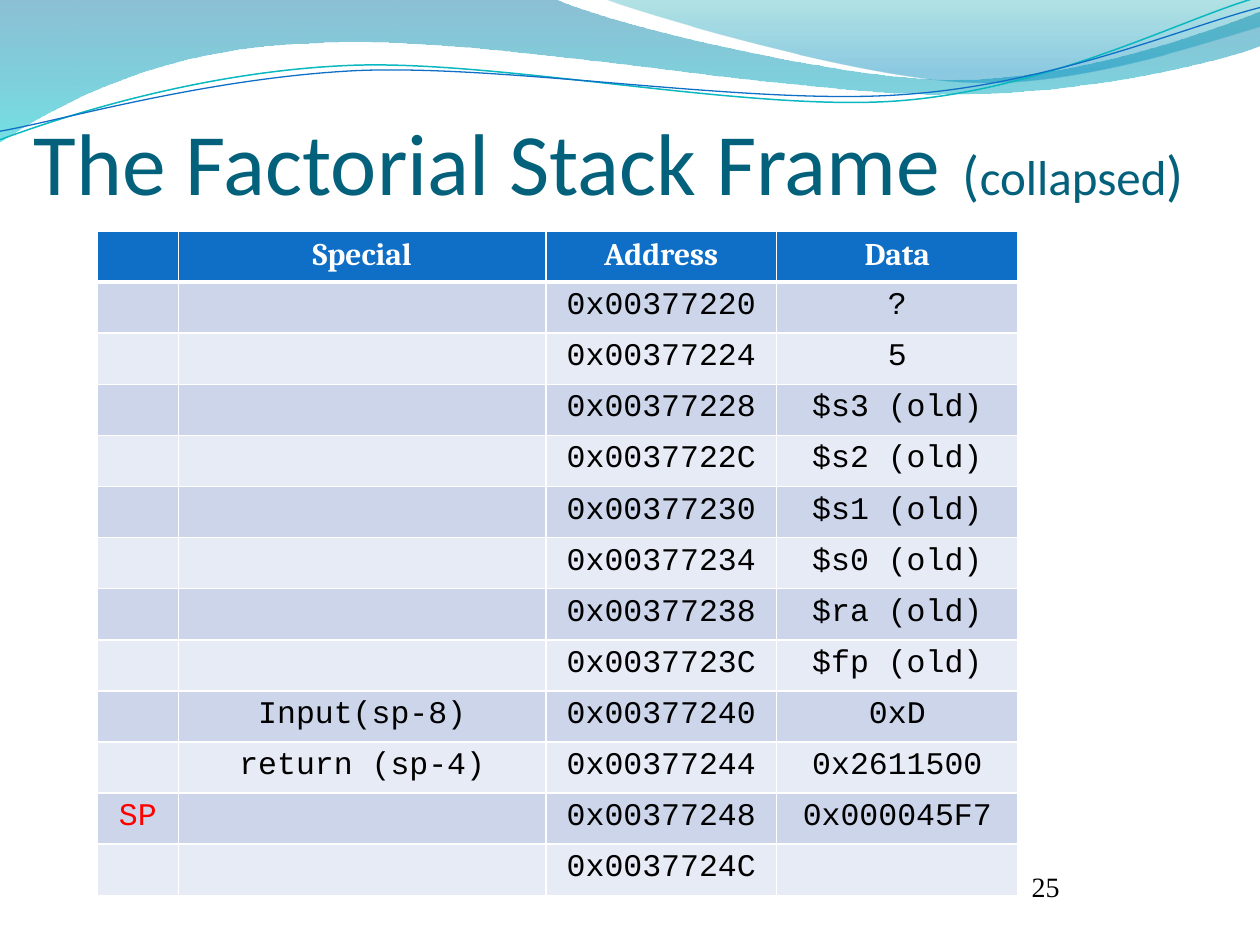
from lxml.etree import SubElement
from pptx import Presentation
from pptx.dml.color import RGBColor
from pptx.enum.text import MSO_ANCHOR as Anchor, MSO_AUTO_SIZE as AutoSize, PP_ALIGN as Align
from pptx.oxml import parse_xml
from pptx.oxml.ns import nsdecls, qn
from pptx.util import Pt


class Theme:
    title, header, code, number = "Calibri", "Cambria", "Courier New", "Times New Roman"
    heading, white, black, red = "04617B", "FFFFFF", "000000", "FF0000"
    header_fill = "0F6FC6"
    bands = ("CCD5EA", "E7EBF5")
    table_size, number_size = 18, 16


TITLE = [("The Factorial Stack Frame", 50), (" ", 54), ("(", 32), ("collapsed", 28), (")", 32)]
PAGE_NUMBER = "25"

HEADER = ("", "Special", "Address", "Data")
STACK = [
    ("", "", "0x00377220", "?"),
    ("", "", "0x00377224", "5"),
    ("", "", "0x00377228", "$s3 (old)"),
    ("", "", "0x0037722C", "$s2 (old)"),
    ("", "", "0x00377230", "$s1 (old)"),
    ("", "", "0x00377234", "$s0 (old)"),
    ("", "", "0x00377238", "$ra (old)"),
    ("", "", "0x0037723C", "$fp (old)"),
    ("", "Input(sp-8)", "0x00377240", "0xD"),
    ("", "return (sp-4)", "0x00377244", "0x2611500"),
    ("SP", "", "0x00377248", "0x000045F7"),
    ("", "", "0x0037724C", ""),
]
COLUMN_WIDTHS = (46.4, 210, 131.8, 138)
ROW_HEIGHT = 29.2

# Each path is a start point, then line ends (x, y) or Bezier curves (three points).
# Gradient stops: position, colour, opacity percent.
BANDS = [
    ([(0, 0), (316.8, -0.7),
      (342.7, 12.2, 478.1, 45.4, 545.8, 45.4), (614.2, 45.4, 689.8, 18.7, 720, 6.5),
      (720.7, 25.9),
      (707.8, 31.7, 626.4, 54.7, 537.1, 54), (447.8, 54, 275, 20.2, 185, 24.5),
      (92.2, 25.9, 33.1, 59.8, -0.7, 81.4), (0, 0)],
     [(0, "0074A1", 45), (1, "00C6CF", 55)]),
    ([(344.9, -0.7),
      (366.5, 7.9, 491, 44.6, 553.7, 46.8), (616.3, 49.7, 691.9, 23, 720, 15.1),
      (720, 0), (344.9, -0.7)],
     [(0, "00A1A9", 30), (0.8, "008BBF", 45)]),
]
STRANDS = [
    ([(-1.4, 62.9), (33.8, 51.7, 114.1, 29.4, 199.8, 29.9),
      (284.8, 30.3, 425.8, 67.3, 512.4, 64.9), (599, 62.4, 676.5, 25.7, 720.2, 15.5)],
     "0AB8BF", 0.85),
    ([(-1.1, 58), (32.9, 53.8, 118.3, 33.2, 204.1, 33),
      (290.6, 33.4, 428.9, 63.8, 515.5, 61.4), (601.4, 59.6, 678.5, 30.1, 721.4, 21.3)],
     "0F6FC6", 0.75),
]
STRAND_ROTATION = 357.3


def rgb(value):
    return RGBColor.from_string(value)


def add_path(page, path, close):
    """Draw every point as a line end, then merge each triple of a curve into one Bezier."""
    points = [(Pt(x), Pt(y)) for part in path for x, y in zip(part[::2], part[1::2])]
    builder = page.shapes.build_freeform(*points[0])
    builder.add_line_segments(points[1:], close=close)
    shape = builder.convert_to_shape()
    shape.shadow.inherit = False
    lines = iter(list(shape.element.iter(qn("a:lnTo"))))
    for part in path[1:]:
        first = next(lines)
        if len(part) == 6:
            curve = parse_xml(f'<a:cubicBezTo {nsdecls("a")}/>')
            first.addprevious(curve)
            for line in (first, next(lines), next(lines)):
                curve.append(line[0])
                line.getparent().remove(line)
    return shape


def add_band(page, path, stops):
    shape = add_path(page, path, True)
    shape.line.fill.background()
    shape.fill.gradient()
    shape.fill.gradient_angle = 270
    for stop, (position, color, _) in zip(shape.fill.gradient_stops, stops):
        stop.position = position
        stop.color.rgb = rgb(color)
    for node, (_, _, opacity) in zip(shape.element.iter(qn("a:srgbClr")), stops):
        SubElement(node, qn("a:alpha"), val=str(opacity * 1000))


def add_strand(page, path, color, width):
    shape = add_path(page, path, False)
    shape.rotation = STRAND_ROTATION
    shape.fill.background()
    shape.line.color.rgb = rgb(color)
    shape.line.width = Pt(width)


def format_span(span, font, size, color, bold=False):
    span.font.name = font
    span.font.size = Pt(size)
    span.font.color.rgb = rgb(color)
    span.font.bold = bold


def add_borders(cell, top, bottom):
    widths = {"lnL": 1, "lnR": 1, "lnT": top, "lnB": bottom}
    properties = cell._tc.get_or_add_tcPr()
    for index, (tag, width) in enumerate(widths.items()):
        properties.insert(index, parse_xml(
            f'<a:{tag} {nsdecls("a")} w="{Pt(width)}"><a:solidFill>'
            f'<a:srgbClr val="{Theme.white}"/></a:solidFill></a:{tag}>'))


def add_stack_table(page):
    rows = [HEADER] + STACK
    frame = page.shapes.add_table(len(rows), len(HEADER), Pt(55.6), Pt(132),
                                  Pt(sum(COLUMN_WIDTHS)), Pt(ROW_HEIGHT * len(rows)))
    table = frame.table
    for column, width in zip(table.columns, COLUMN_WIDTHS):
        column.width = Pt(width)
    for index, values in enumerate(rows):
        table.rows[index].height = Pt(ROW_HEIGHT)
        is_header = index == 0
        fill = Theme.header_fill if is_header else Theme.bands[(index - 1) % 2]
        for column, value in enumerate(values):
            cell = table.cell(index, column)
            cell.fill.solid()
            cell.fill.fore_color.rgb = rgb(fill)
            add_borders(cell, 3 if index == 1 else 1, 3 if is_header else 1)
            if not value:
                continue
            cell.text_frame.text = value
            para = cell.text_frame.paragraphs[0]
            para.alignment = Align.CENTER
            if is_header:
                format_span(para.runs[0], Theme.header, Theme.table_size, Theme.white, True)
            else:
                color = Theme.red if column == 0 else Theme.black
                format_span(para.runs[0], Theme.code, Theme.table_size, color)


def add_page_number(page):
    box = page.shapes.add_textbox(Pt(589.5), Pt(486), Pt(77.8), Pt(30.2))
    frame = box.text_frame
    frame.word_wrap = True
    frame.vertical_anchor = Anchor.BOTTOM
    frame.margin_left = frame.margin_right = frame.margin_top = frame.margin_bottom = 0
    frame.text = PAGE_NUMBER
    format_span(frame.paragraphs[0].runs[0], Theme.number, Theme.number_size, Theme.black)


def place_title(page):
    title = page.shapes.title
    title.left, title.top, title.width, title.height = Pt(12.2), Pt(54), Pt(684), Pt(48.2)
    frame = title.text_frame
    frame.word_wrap = True
    frame.auto_size = AutoSize.NONE
    frame.vertical_anchor = Anchor.TOP
    para = frame.paragraphs[0]
    para.alignment = Align.LEFT
    for text, size in TITLE:
        span = para.add_run()
        span.text = text
        format_span(span, Theme.title, size, Theme.heading)
    title.element.getparent().append(title.element)  # in front of the waves


def main():
    deck = Presentation()
    deck.slide_width, deck.slide_height = Pt(720), Pt(540)
    page = deck.slides.add_slide(deck.slide_layouts[5])
    for band in BANDS:
        add_band(page, *band)
    for strand in STRANDS:
        add_strand(page, *strand)
    add_page_number(page)
    place_title(page)
    add_stack_table(page)
    deck.save("out.pptx")


if __name__ == "__main__":
    main()
